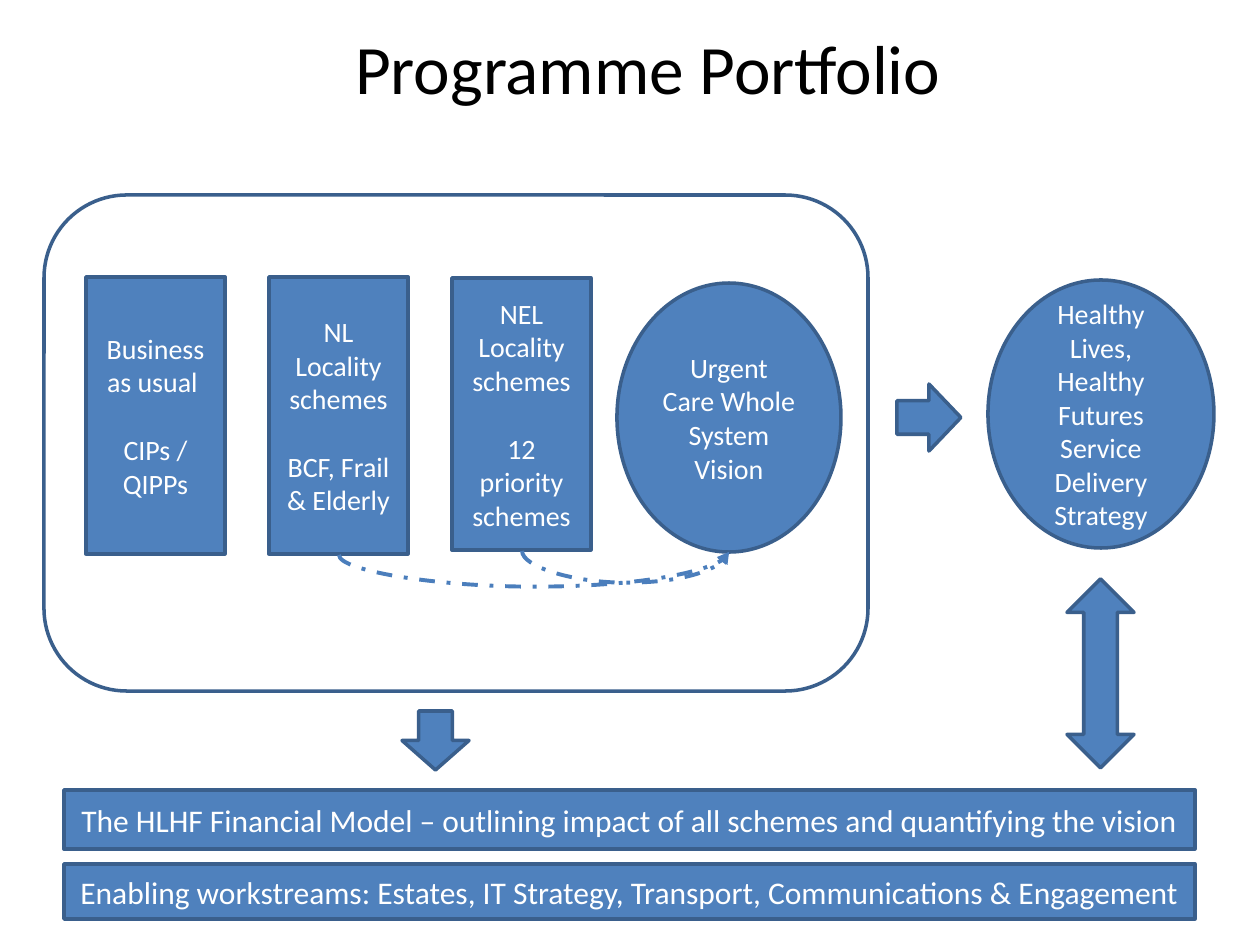
"""Build the Programme Portfolio slide."""
from dataclasses import dataclass

from lxml import etree
from pptx import Presentation
from pptx.dml.color import RGBColor
from pptx.enum.dml import MSO_LINE
from pptx.enum.shapes import MSO_CONNECTOR, MSO_SHAPE
from pptx.enum.text import MSO_ANCHOR, MSO_AUTO_SIZE, PP_ALIGN
from pptx.oxml.ns import qn
from pptx.slide import Slide
from pptx.text.text import TextFrame
from pptx.util import Emu, Pt

PIXELS_PER_INCH = 126
FONT = "Calibri"
BLUE, OUTLINE, LINK = "4F81BD", "3A5F8C", "4B7EBC"
WHITE, BLACK = "FFFFFF", "000000"
RECTANGLE, ROUNDED = MSO_SHAPE.RECTANGLE, MSO_SHAPE.ROUNDED_RECTANGLE
OVAL = MSO_SHAPE.OVAL
RIGHT_ARROW, DOWN_ARROW = MSO_SHAPE.RIGHT_ARROW, MSO_SHAPE.DOWN_ARROW
DOUBLE_ARROW = MSO_SHAPE.LEFT_RIGHT_ARROW
CURVE = MSO_CONNECTOR.CURVE
DASH_DOT = MSO_LINE.DASH_DOT
CENTER, MIDDLE = PP_ALIGN.CENTER, MSO_ANCHOR.MIDDLE
NO_AUTOFIT = MSO_AUTO_SIZE.NONE
TITLE_ONLY = 5
COLUMN_LEFT, COLUMN_STEP, COLUMN_WIDTH = 86, 183, 139
BAR_LEFT, BAR_WIDTH = 64, 1131
PARAGRAPH_GAP = 19.5


@dataclass(frozen=True)
class Block:
    """A preset shape with its frame in px and its paragraphs."""
    kind: MSO_SHAPE
    left: int
    top: int
    width: int
    height: int
    paragraphs: tuple[str, ...] = ()
    size: float = 16
    rotation: int = 0
    fill: str | None = BLUE


@dataclass(frozen=True)
class Link:
    """A curve that sags below its start before it reaches its end."""
    start_x: int
    start_y: int
    end_x: int
    end_y: int
    sag: int = 32


def column(index: int, top: int, height: int, *paragraphs: str) -> Block:
    """Describe one scheme column."""
    left = COLUMN_LEFT + index * COLUMN_STEP
    return Block(RECTANGLE, left, top, COLUMN_WIDTH, height, paragraphs)


def bar(top: int, height: int, text: str) -> Block:
    """Describe one full-width bar."""
    return Block(RECTANGLE, BAR_LEFT, top, BAR_WIDTH, height, (text,), size=18)


BLOCKS = (
    Block(ROUNDED, 44, 195, 824, 496, fill=None),
    column(0, 277, 277, "Business as usual ", "CIPs / QIPPs"),
    column(1, 277, 277, "NL Locality schemes", "BCF, Frail & Elderly"),
    column(2, 278, 272, "NEL Locality schemes", "12 priority schemes"),
    Block(OVAL, 617, 283, 224, 269, ("Urgent Care Whole System Vision",)),
    Block(OVAL, 988, 280, 226, 268,
          ("Healthy Lives, Healthy Futures Service Delivery Strategy",)),
    Block(RIGHT_ARROW, 897, 384, 64, 67),
    Block(DOWN_ARROW, 402, 711, 67, 59),
    Block(DOUBLE_ARROW, 1006, 640, 189, 67, rotation=90),
    bar(790, 59, "The HLHF Financial Model – outlining impact of all schemes "
                 "and quantifying the vision"),
    bar(864, 55, "Enabling workstreams: Estates, IT Strategy, Transport, "
                 "Communications & Engagement"),
)
LINKS = (Link(522, 551, 729, 552), Link(339, 555, 729, 552))


def px(length: float) -> Emu:
    """Turn px into EMU."""
    return Emu(round(length * 914400 / PIXELS_PER_INCH))


def color(value: str) -> RGBColor:
    """Turn a hex string into a colour."""
    return RGBColor.from_string(value)


def write(frame: TextFrame, paragraphs: tuple[str, ...], size: float, ink: str) -> None:
    """Write centred paragraphs with a gap between them."""
    frame.text = "\n".join(paragraphs)
    frame.word_wrap = True
    frame.auto_size = NO_AUTOFIT
    frame.vertical_anchor = MIDDLE
    for index, paragraph in enumerate(frame.paragraphs):
        paragraph.alignment = CENTER
        if index:
            paragraph.space_before = Pt(PARAGRAPH_GAP)
        for run in paragraph.runs:
            run.font.name = FONT
            run.font.size = Pt(size)
            run.font.color.rgb = color(ink)


def draw_title(slide: Slide, text: str) -> None:
    """Place and format the title."""
    title = slide.shapes.title
    title.left, title.top = px(81), px(26)
    title.width, title.height = px(1134), px(81)
    write(title.text_frame, (text,), 39.6, BLACK)


def draw_block(slide: Slide, block: Block) -> None:
    """Draw one block with its text."""
    shape = slide.shapes.add_shape(
        block.kind, px(block.left), px(block.top), px(block.width), px(block.height))
    shape.shadow.inherit = False
    shape.rotation = block.rotation
    if block.fill:
        shape.fill.solid()
        shape.fill.fore_color.rgb = color(block.fill)
    else:
        shape.fill.background()
    shape.line.color.rgb = color(OUTLINE)
    shape.line.width = Pt(2)
    if block.paragraphs:
        write(shape.text_frame, block.paragraphs, block.size, WHITE)


def draw_link(slide: Slide, link: Link) -> None:
    """Draw a dashed curve turned on its side, with an arrowhead at its end."""
    drop = link.end_y - link.start_y
    center_x = (link.start_x + link.end_x) / 2
    center_y = (link.start_y + link.end_y) / 2
    half_width, half_height = abs(drop) / 2, (link.end_x - link.start_x) / 2
    connector = slide.shapes.add_connector(
        CURVE, px(center_x - half_width), px(center_y - half_height),
        px(center_x + half_width), px(center_y + half_height))
    connector.line.color.rgb = color(LINK)
    connector.line.width = Pt(2.25)
    connector.line.dash_style = DASH_DOT

    properties = connector._element.spPr
    frame = properties.find(qn("a:xfrm"))
    frame.set("rot", str((270 if drop > 0 else 90) * 60000))
    frame.set("flipH", "1")
    if drop < 0:
        frame.set("flipV", "1")
    adjustments = properties.find(qn("a:prstGeom")).find(qn("a:avLst"))
    etree.SubElement(adjustments, qn("a:gd"), name="adj1",
                     fmla=f"val {round(100000 * link.sag / drop)}")
    etree.SubElement(properties.find(qn("a:ln")), qn("a:tailEnd"), type="triangle")
    etree.SubElement(properties, qn("a:effectLst"))


def main() -> None:
    """Build and save the presentation."""
    presentation = Presentation()
    presentation.slide_width, presentation.slide_height = px(1260), px(945)
    slide = presentation.slides.add_slide(presentation.slide_layouts[TITLE_ONLY])
    draw_title(slide, "Programme Portfolio")
    for block in BLOCKS:
        draw_block(slide, block)
    for link in LINKS:
        draw_link(slide, link)
    presentation.save("out.pptx")


if __name__ == "__main__":
    main()
